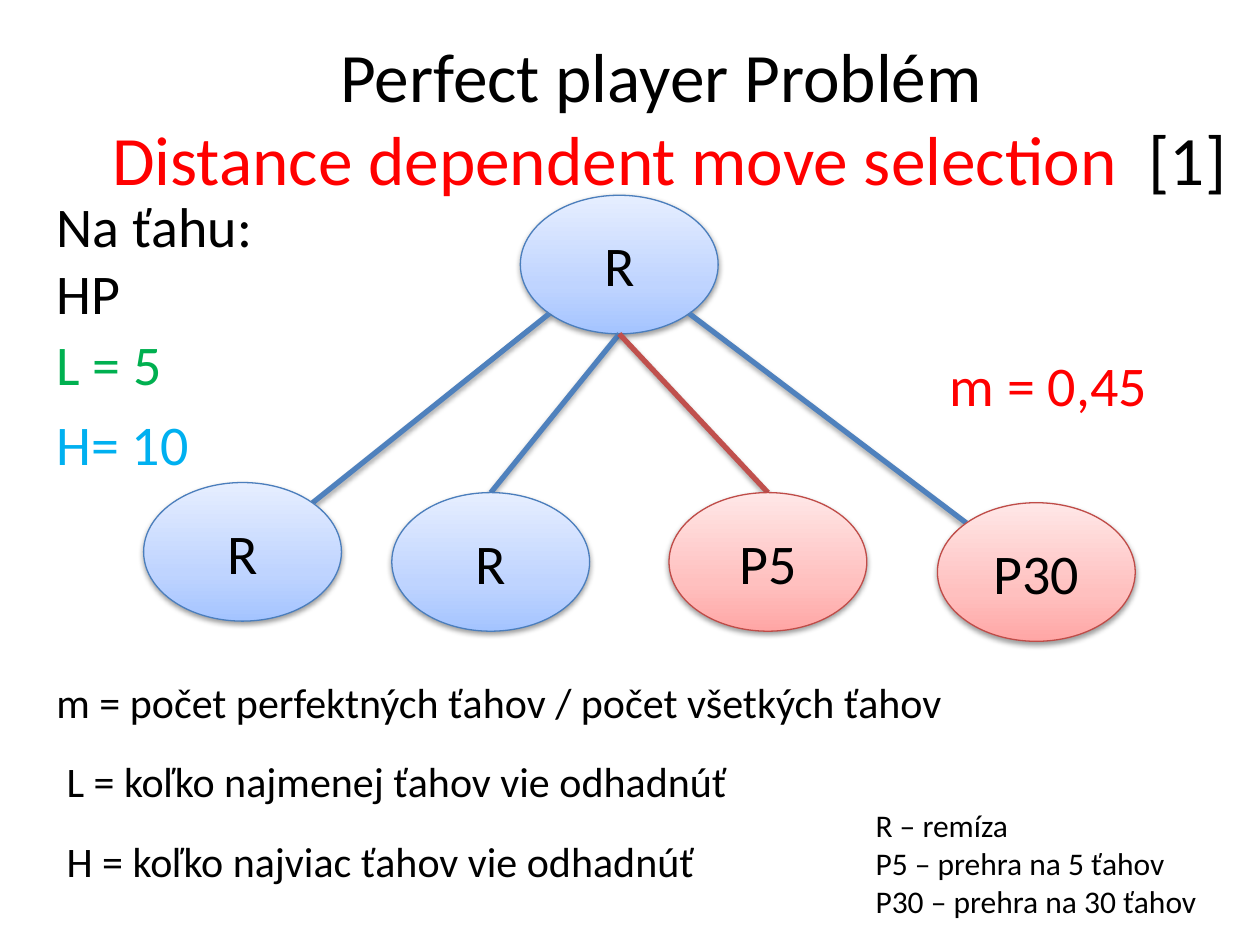
from dataclasses import dataclass
from math import sqrt

from lxml import etree
from pptx import Presentation
from pptx.dml.color import RGBColor
from pptx.enum.shapes import MSO_CONNECTOR, MSO_SHAPE
from pptx.enum.text import MSO_ANCHOR, MSO_AUTO_SIZE, PP_ALIGN
from pptx.oxml.ns import qn
from pptx.util import Inches, Pt

ELLIPSE = MSO_SHAPE.OVAL
STRAIGHT = MSO_CONNECTOR.STRAIGHT
CENTER = PP_ALIGN.CENTER
MIDDLE = MSO_ANCHOR.MIDDLE
TITLE_ONLY = 5
TOP_SITE = 0


@dataclass(frozen=True)
class Palette:
    outline: str
    edge: str
    stops: tuple  # (position in percent, colour)


@dataclass(frozen=True)
class Theme:
    font: str = "Calibri"
    black: str = "000000"
    red: str = "FF0000"
    green: str = "00B050"
    cyan: str = "00B0F0"
    title_size: float = 39.6
    large: float = 32
    medium: float = 24
    small: float = 18
    draw: Palette = Palette("4B7EBC", "4F81BD", ((0, "A4C4FF"), (35, "BFD4FF"), (100, "E6EEFF")))
    loss: Palette = Palette("BF4C48", "C0504D", ((0, "FFA6A5"), (35, "FFC0BF"), (100, "FFE7E7")))


THEME = Theme()
NODE_WIDTH, NODE_HEIGHT = 1.57, 1.1


@dataclass(frozen=True)
class Node:
    label: str
    left: float
    top: float
    palette: Palette

    def point(self, across: float, down: float) -> tuple:
        """Point at a fraction of the half axes from the centre."""
        return (self.left + NODE_WIDTH / 2 * (1 + across),
                self.top + NODE_HEIGHT / 2 * (1 + down))


@dataclass(frozen=True)
class Branch:
    child: Node
    side: int  # -1 lower left, 0 bottom, 1 lower right of the root
    color: str


@dataclass(frozen=True)
class Label:
    lines: tuple
    left: float
    top: float
    width: float
    height: float
    size: float
    color: str = THEME.black


ROOT = Node("R", 4.13, 1.55, THEME.draw)
BRANCHES = (
    Branch(Node("R", 1.14, 3.83, THEME.draw), -1, THEME.draw.edge),
    Branch(Node("P30", 7.44, 3.99, THEME.loss), 1, THEME.draw.edge),
    Branch(Node("R", 3.11, 3.91, THEME.draw), 0, THEME.draw.edge),
    Branch(Node("P5", 5.31, 3.91, THEME.loss), 0, THEME.loss.edge),
)
LABELS = (
    Label(("Na ťahu: HP",), 0.35, 1.47, 1.97, 1.18, THEME.large),
    Label(("L = 5",), 0.35, 2.57, 1.34, 0.64, THEME.large, THEME.green),
    Label(("H= 10",), 0.35, 3.2, 1.34, 0.64, THEME.large, THEME.cyan),
    Label(("m = 0,45",), 7.44, 2.73, 2.36, 0.64, THEME.large, THEME.red),
    Label(("m = počet perfektných ťahov / počet všetkých ťahov",),
          0.35, 5.32, 9.06, 0.5, THEME.medium),
    Label(("L = koľko najmenej ťahov vie odhadnúť",), 0.43, 5.95, 6.61, 0.5, THEME.medium),
    Label(("H = koľko najviac ťahov vie odhadnúť",), 0.43, 6.58, 6.61, 0.5, THEME.medium),
    Label(("R – remíza", "P5 – prehra na 5 ťahov", "P30 – prehra na 30 ťahov"),
          6.85, 6.35, 3.15, 1.01, THEME.small),
)


def add_run(paragraph, text: str, size: float, color: str) -> None:
    run = paragraph.add_run()
    run.text = text
    run.font.name = THEME.font
    run.font.size = Pt(size)
    run.font.color.rgb = RGBColor.from_string(color)


def add_color(parent, color: str):
    return etree.SubElement(parent, qn("a:srgbClr"), val=color)


def add_shadow(effects, opacity: int, distance: float) -> None:
    """Soft shadow straight below."""
    shadow = etree.SubElement(effects, qn("a:outerShdw"), blurRad=str(Pt(3.1)),
                              dist=str(Pt(distance)), dir="5400000", rotWithShape="0")
    etree.SubElement(add_color(shadow, THEME.black), qn("a:alpha"), val=str(opacity * 1000))


def add_title(slide) -> None:
    title = slide.shapes.title
    title.left, title.top = Inches(0.5), Inches(0.3)
    title.width, title.height = Inches(9.5), Inches(1.25)
    frame = title.text_frame
    frame.auto_size = MSO_AUTO_SIZE.NONE
    frame.vertical_anchor = MIDDLE
    paragraph = frame.paragraphs[0]
    paragraph.alignment = CENTER
    add_run(paragraph, "Perfect player Problém", THEME.title_size, THEME.black)
    paragraph.add_line_break()
    add_run(paragraph, " ", THEME.title_size, THEME.black)
    add_run(paragraph, "Distance dependent move selection  ", THEME.title_size, THEME.red)
    add_run(paragraph, "[1]", THEME.title_size, THEME.black)


def add_node(slide, node: Node):
    shape = slide.shapes.add_shape(ELLIPSE, Inches(node.left), Inches(node.top),
                                   Inches(NODE_WIDTH), Inches(NODE_HEIGHT))
    shape.line.color.rgb = RGBColor.from_string(node.palette.outline)
    shape.line.width = Pt(0.75)
    # Three-stop gradient running upwards
    shape.fill.gradient()
    shape.fill.gradient_angle = 90
    properties = shape.element.spPr
    stop_list = properties.find(".//" + qn("a:gsLst"))
    for stop in list(stop_list):
        stop_list.remove(stop)
    for position, color in node.palette.stops:
        add_color(etree.SubElement(stop_list, qn("a:gs"), pos=str(position * 1000)), color)
    shape.shadow.inherit = False
    add_shadow(properties.find(qn("a:effectLst")), 38, 1.6)
    frame = shape.text_frame
    frame.vertical_anchor = MIDDLE
    frame.paragraphs[0].alignment = CENTER
    add_run(frame.paragraphs[0], node.label, THEME.large, THEME.black)
    return shape


def add_branch(slide, branch: Branch) -> None:
    diagonal = 1 / sqrt(2)
    across = branch.side * diagonal
    down = diagonal if branch.side else 1
    points = ROOT.point(across, down) + branch.child.point(-across, -down)
    connector = slide.shapes.add_connector(STRAIGHT, *(Inches(value) for value in points))
    connector.line.color.rgb = RGBColor.from_string(branch.color)
    connector.line.width = Pt(3)
    add_shadow(etree.SubElement(connector.element.spPr, qn("a:effectLst")), 35, 1.8)
    child = add_node(slide, branch.child)
    if branch.side == 0:
        connector.end_connect(child, TOP_SITE)


def add_label(slide, label: Label) -> None:
    box = slide.shapes.add_textbox(Inches(label.left), Inches(label.top),
                                   Inches(label.width), Inches(label.height))
    frame = box.text_frame
    frame.word_wrap = True
    frame.auto_size = MSO_AUTO_SIZE.SHAPE_TO_FIT_TEXT
    for index, line in enumerate(label.lines):
        paragraph = frame.add_paragraph() if index else frame.paragraphs[0]
        add_run(paragraph, line, label.size, label.color)


def main() -> None:
    presentation = Presentation()
    presentation.slide_width, presentation.slide_height = Inches(10), Inches(7.5)
    slide = presentation.slides.add_slide(presentation.slide_layouts[TITLE_ONLY])
    add_title(slide)
    # Game tree
    add_node(slide, ROOT)
    for branch in BRANCHES:
        add_branch(slide, branch)
    # Parameters, definitions and legend
    for label in LABELS:
        add_label(slide, label)
    presentation.save("out.pptx")


if __name__ == "__main__":
    main()
